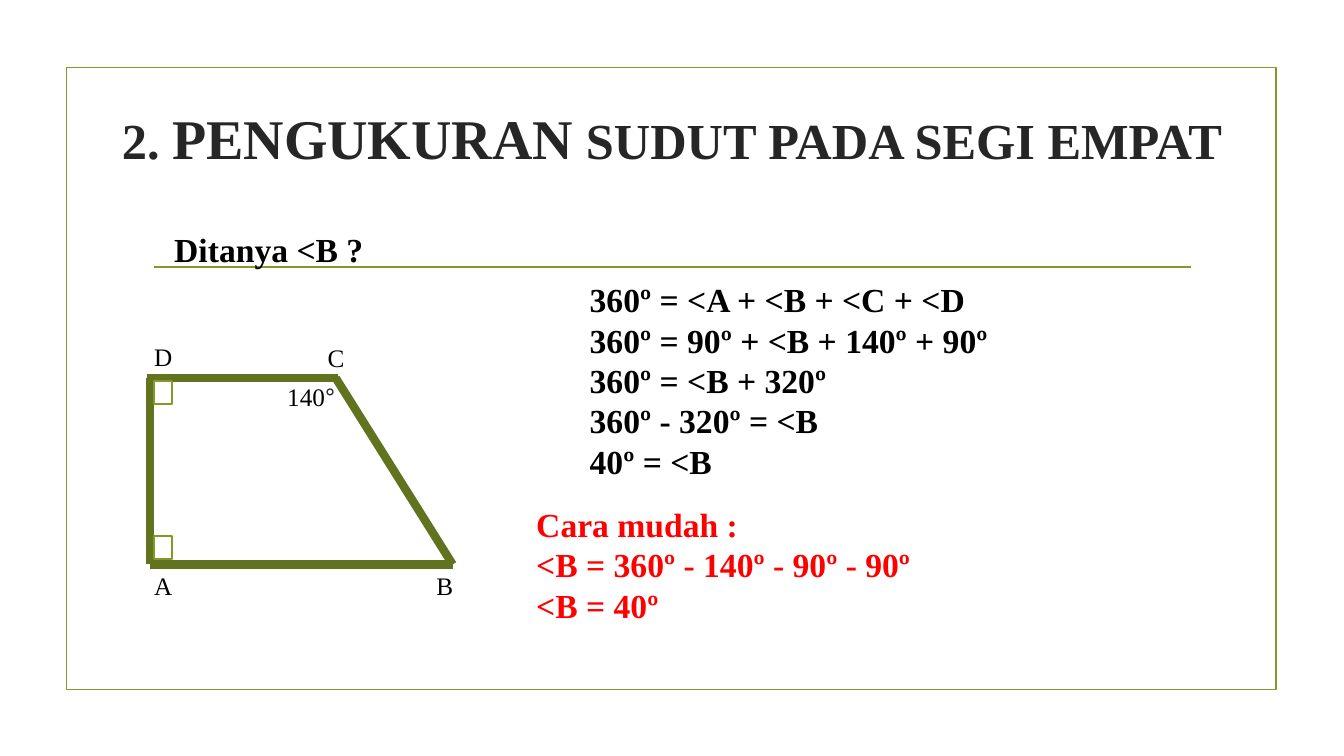
from dataclasses import dataclass
from lxml import etree
from pptx import Presentation
from pptx.dml.color import RGBColor
from pptx.enum.shapes import MSO_CONNECTOR as Connector, MSO_SHAPE as Preset
from pptx.enum.text import MSO_ANCHOR as Anchor, MSO_AUTO_SIZE as AutoSize, PP_ALIGN as Align
from pptx.oxml.ns import qn
from pptx.slide import Slide
from pptx.util import Inches, Pt

COLORS = {
    "frame": "83992A", "side": "62731F", "white": "FFFFFF", "title": "262626",
    "text": "000000", "degree": "202124", "answer": "FF0000",
}
SERIF = "Times New Roman"


@dataclass(frozen=True)
class Line:
    start: tuple[float, float]
    end: tuple[float, float]
    color: str = "side"
    width: float = 6


@dataclass(frozen=True)
class Box:
    left: float
    top: float
    width: float
    height: float
    fill: str | None = "white"


@dataclass(frozen=True)
class Run:
    text: str
    size: float = 18
    color: str = "text"
    bold: bool = False
    font: str = SERIF


@dataclass(frozen=True)
class Label:
    left: float
    top: float
    width: float
    height: float
    paragraphs: list[list[Run]]


def heading_lines(lines: list[str], color: str = "text") -> list[list[Run]]:
    return [[Run(line, 24, color, True)] for line in lines]


def vertex(name: str, left: float, top: float) -> Label:
    return Label(left, top, 0.99, 0.4, [[Run(name)]])


DIVIDER = Line((1.53, 2.65), (11.81, 2.65), "frame", 1.25)
TRAPEZOID = [
    Line((1.49, 3.75), (1.49, 5.6)),
    Line((4.49, 5.6), (1.49, 5.6)),
    Line((1.46, 3.75), (3.35, 3.75)),
    Line((3.33, 3.75), (4.49, 5.6)),
]
FRAME = Box(0.66, 0.67, 12, 6.17, None)
RIGHT_ANGLES = [Box(1.53, top, 0.18, 0.23) for top in (3.78, 5.32)]
TITLE = [
    Run("2. ", 36, "title", True),
    Run("PENGUKURAN", 40, "title", True),
    Run(" SUDUT PADA SEGI EMPAT", 36, "title", True),
]
LABELS = [
    vertex("A", 1.43, 5.61),
    vertex("B", 4.23, 5.61),
    vertex("C", 3.15, 3.35),
    vertex("D", 1.43, 3.34),
    Label(2.75, 3.73, 0.99, 0.4, [[Run("140"), Run("°", color="degree", font="Arial")]]),
    Label(5.75, 2.72, 5.78, 2.12, heading_lines([
        "360º = <A + <B + <C + <D",
        "360º = 90º + <B + 140º + 90º",
        "360º = <B + 320º",
        "360º - 320º = <B",
        "40º = <B",
    ])),
    Label(5.22, 4.95, 5.78, 1.31, heading_lines([
        "Cara mudah :",
        "<B = 360º - 140º - 90º - 90º",
        "<B = 40º",
    ], "answer")),
    Label(1.63, 2.22, 2.26, 0.5, heading_lines(["Ditanya <B ?"])),
]


def rgb(name: str) -> RGBColor:
    return RGBColor.from_string(COLORS[name])


def apply_format(target: object, values: dict[str, object]) -> None:
    for name, value in values.items():
        setattr(target, name, value)


def draw_line(slide: Slide, line: Line) -> None:
    points = [Inches(value) for value in (*line.start, *line.end)]
    connector = slide.shapes.add_connector(Connector.STRAIGHT, *points)
    connector.line.color.rgb = rgb(line.color)
    connector.line.width = Pt(line.width)
    properties = connector.element.find(qn("p:spPr"))
    etree.SubElement(properties, qn("a:effectLst"))


def draw_box(slide: Slide, box: Box) -> None:
    position = [Inches(value) for value in (box.left, box.top, box.width, box.height)]
    shape = slide.shapes.add_shape(Preset.RECTANGLE, *position)
    shape.shadow.inherit = False
    if box.fill:
        shape.fill.solid()
        shape.fill.fore_color.rgb = rgb(box.fill)
    else:
        shape.fill.background()
    shape.line.color.rgb = rgb("frame")
    shape.line.width = Pt(1.25)


def write_runs(paragraph: object, runs: list[Run]) -> None:
    for item in runs:
        run = paragraph.add_run()
        run.text = item.text
        apply_format(run.font, {"name": item.font, "size": Pt(item.size), "bold": item.bold})
        run.font.color.rgb = rgb(item.color)


def draw_label(slide: Slide, label: Label) -> None:
    position = [Inches(value) for value in (label.left, label.top, label.width, label.height)]
    frame = slide.shapes.add_textbox(*position).text_frame
    apply_format(frame, {"word_wrap": True, "auto_size": AutoSize.SHAPE_TO_FIT_TEXT})
    for index, runs in enumerate(label.paragraphs):
        paragraph = frame.add_paragraph() if index else frame.paragraphs[0]
        write_runs(paragraph, runs)


def draw_title(slide: Slide) -> None:
    title = slide.shapes.title
    apply_format(title, {
        "left": Inches(0.67), "top": Inches(0.73),
        "width": Inches(11.99), "height": Inches(1.26),
    })
    apply_format(title.text_frame, {
        "word_wrap": True, "auto_size": AutoSize.NONE, "vertical_anchor": Anchor.MIDDLE,
    })
    paragraph = title.text_frame.paragraphs[0]
    paragraph.alignment = Align.CENTER
    write_runs(paragraph, TITLE)


def main() -> None:
    """Build the slide on measuring angles in a quadrilateral."""
    presentation = Presentation()
    apply_format(presentation, {"slide_width": Inches(13.33), "slide_height": Inches(7.5)})
    slide = presentation.slides.add_slide(presentation.slide_layouts[5])
    draw_box(slide, FRAME)
    for line in [DIVIDER, *TRAPEZOID]:
        draw_line(slide, line)
    for box in RIGHT_ANGLES:
        draw_box(slide, box)
    for label in LABELS:
        draw_label(slide, label)
    draw_title(slide)
    presentation.save("out.pptx")


if __name__ == "__main__":
    main()
